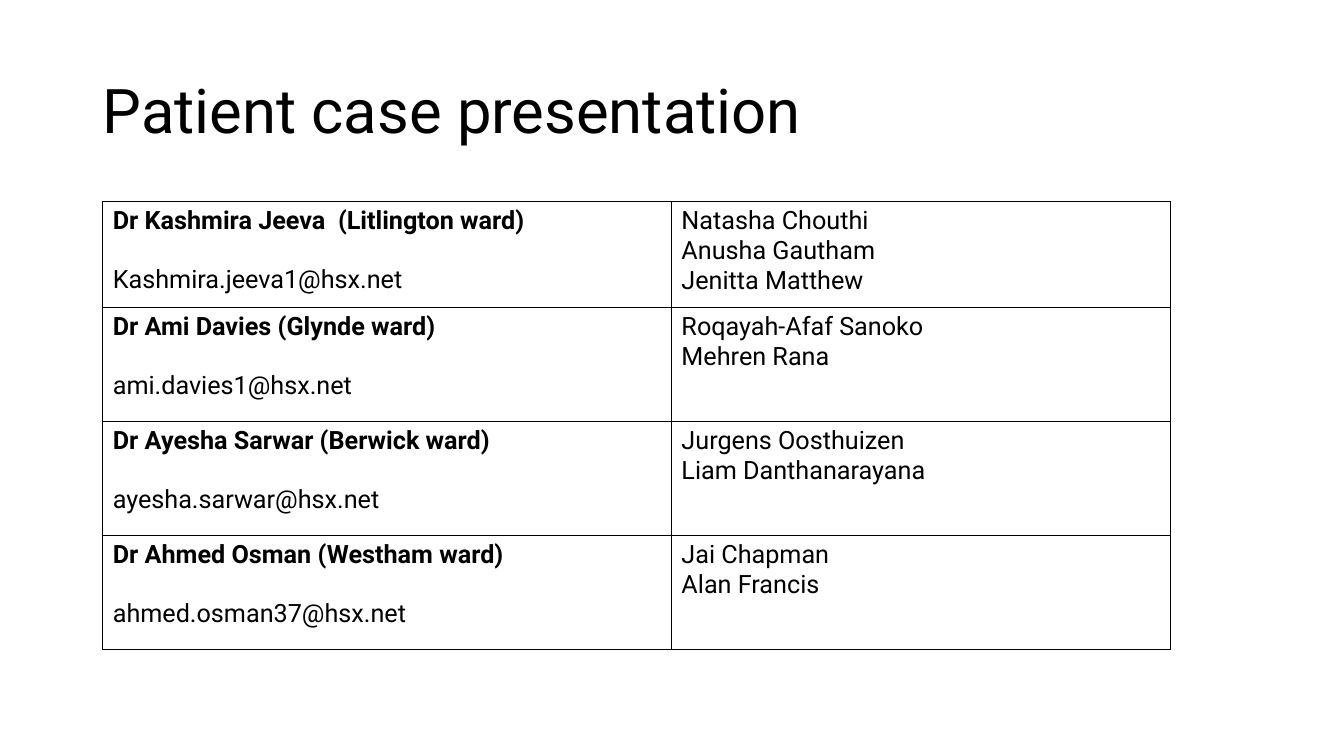
"""Build the patient case presentation slide with its table of ward doctors."""
from dataclasses import dataclass

from lxml import etree
from pptx import Presentation
from pptx import util as u
from pptx.dml import color
from pptx.enum import text as t
from pptx.oxml import ns

FONT = "Roboto"
BLACK = "000000"
WHITE = "FFFFFF"
COLUMN_WIDTHS = (14.33, 12.57)
ROW_HEIGHTS = (2.67, 2.87, 2.87, 2.87)


@dataclass(frozen=True)
class Ward:
    doctor: str
    email: str
    students: tuple[str, ...]


WARDS = (
    Ward("Dr Kashmira Jeeva  (Litlington ward)", "Kashmira.jeeva1@hsx.net",
         ("Natasha Chouthi", "Anusha Gautham", "Jenitta Matthew")),
    Ward("Dr Ami Davies (Glynde ward)", "ami.davies1@hsx.net",
         ("Roqayah-Afaf Sanoko", "Mehren Rana")),
    Ward("Dr Ayesha Sarwar (Berwick ward)", "ayesha.sarwar@hsx.net",
         ("Jurgens Oosthuizen", "Liam Danthanarayana")),
    Ward("Dr Ahmed Osman (Westham ward)", "ahmed.osman37@hsx.net",
         ("Jai Chapman", "Alan Francis")),
)


def paint(target, colour: str) -> None:
    target.solid()
    target.fore_color.rgb = color.RGBColor.from_string(colour)


def set_font(para, size: float, bold: bool = False) -> None:
    para.font.name = FONT
    para.font.size = u.Pt(size)
    para.font.bold = bold
    paint(para.font.fill, BLACK)


def add_borders(cell) -> None:
    properties = cell._tc.get_or_add_tcPr()
    for side in ("lnL", "lnR", "lnT", "lnB"):
        line = etree.SubElement(properties, ns.qn(f"a:{side}"), w=str(u.Pt(1)))
        fill = etree.SubElement(line, ns.qn("a:solidFill"))
        etree.SubElement(fill, ns.qn("a:srgbClr"), val=BLACK)


def fill_cell(cell, lines: tuple[str, ...]) -> None:
    add_borders(cell)
    paint(cell.fill, WHITE)
    cell.text = "\n".join(lines)
    for para in cell.text_frame.paragraphs:
        set_font(para, 18)


def add_title(page) -> None:
    title = page.shapes.title
    title.left, title.top = u.Cm(2.33), u.Cm(1.01)
    title.width, title.height = u.Cm(29.21), u.Cm(3.68)
    title.text_frame.text = "Patient case presentation"
    title.text_frame.word_wrap = True
    title.text_frame.vertical_anchor = t.MSO_ANCHOR.MIDDLE
    para = title.text_frame.paragraphs[0]
    para.alignment = t.PP_ALIGN.LEFT
    para.line_spacing = 0.9
    set_font(para, 44)


def add_ward_table(page) -> None:
    frame = page.shapes.add_table(
        len(WARDS), len(COLUMN_WIDTHS), u.Cm(2.59), u.Cm(5.08),
        u.Cm(sum(COLUMN_WIDTHS)), u.Cm(sum(ROW_HEIGHTS)))
    table = frame.table
    table.first_row = table.horz_banding = False
    for column, width in zip(table.columns, COLUMN_WIDTHS):
        column.width = u.Cm(width)
    for row, height, ward in zip(table.rows, ROW_HEIGHTS, WARDS):
        row.height = u.Cm(height)
        contact, students = row.cells
        fill_cell(contact, (ward.doctor, ward.email))
        fill_cell(students, ward.students)
        doctor, email = contact.text_frame.paragraphs
        doctor.font.bold = True
        email.space_before = u.Pt(21)


def main() -> None:
    deck = Presentation()
    deck.slide_width, deck.slide_height = u.Cm(33.87), u.Cm(19.05)
    page = deck.slides.add_slide(deck.slide_layouts.get_by_name("Title Only"))
    paint(page.background.fill, WHITE)
    add_title(page)
    add_ward_table(page)
    deck.save("out.pptx")


if __name__ == "__main__":
    main()
